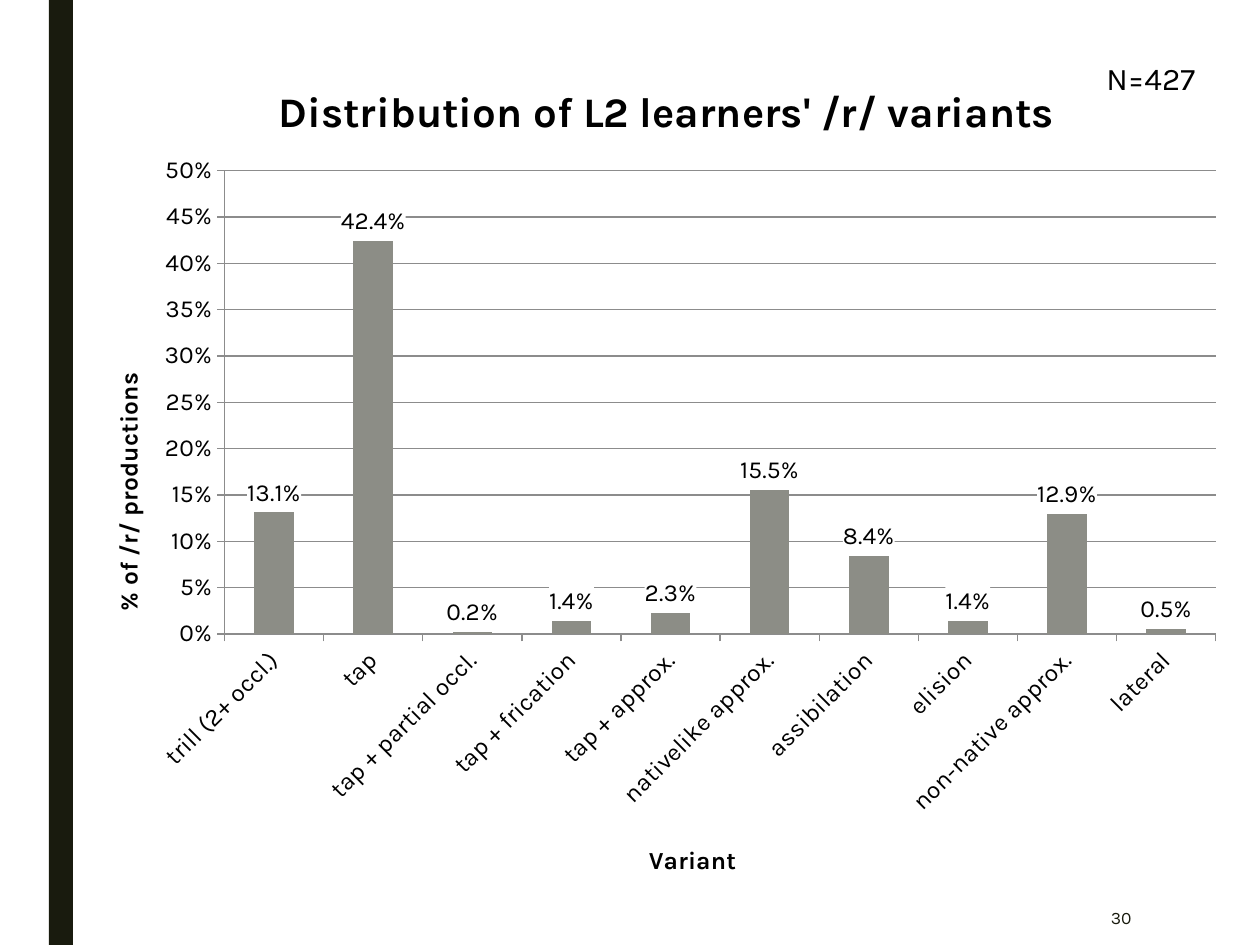
"""Build a slide with a column chart of L2 learners' /r/ variants."""
import pptx
import pptx.chart.data
import pptx.dml.color
import pptx.enum.chart
import pptx.enum.shapes
import pptx.enum.text
import pptx.oxml
import pptx.oxml.ns
import pptx.util

HUES = {"dark": "191B0E", "bar": "8C8D86", "line": "8C8C8C", "text": "000000", "back": "FFFFFF"}
HUES = {name: pptx.dml.color.RGBColor.from_string(code) for name, code in HUES.items()}
FACE = "Karla"
SHARES = {
    "trill (2+ occl.)": 0.131,
    "tap": 0.424,
    "tap + partial occl.": 0.002,
    "tap + frication": 0.014,
    "tap + approx.": 0.023,
    "nativelike approx.": 0.155,
    "assibilation": 0.084,
    "elision": 0.014,
    "non-native approx.": 0.129,
    "lateral": 0.005,
}


def style(font, size, hue="text", bold=False):
    font.name, font.size, font.bold = FACE, pptx.util.Pt(size), bold
    font.color.rgb = HUES[hue]


def place(part, index, **spots):
    for old in part.findall(pptx.oxml.ns.qn("c:layout")):
        part.remove(old)
    inner = '<c:layoutTarget val="inner"/>' if "w" in spots else ""
    modes = "".join(f'<c:{key}Mode val="edge"/>' for key in "xy")
    sizes = "".join(f'<c:{key} val="{val}"/>' for key, val in spots.items())
    part.insert(index, pptx.oxml.parse_xml(
        f'<c:layout {pptx.oxml.ns.nsdecls("c")}><c:manualLayout>'
        f"{inner}{modes}{sizes}</c:manualLayout></c:layout>"))


px = 914400 / 126
deck = pptx.Presentation()
deck.slide_width, deck.slide_height = int(1260 * px), int(945 * px)
slide = deck.slides.add_slide(deck.slide_layouts[6])

bar = slide.shapes.add_shape(
    pptx.enum.shapes.MSO_SHAPE.RECTANGLE, *[int(n * px) for n in (49, 0, 24, 945)])
bar.shadow.inherit = False
bar.fill.solid()
bar.fill.fore_color.rgb = HUES["dark"]
bar.line.fill.background()

data = pptx.chart.data.CategoryChartData(number_format="0.0%")
data.categories = list(SHARES)
data.add_series("Series 1", list(SHARES.values()))
chart = slide.shapes.add_chart(
    pptx.enum.chart.XL_CHART_TYPE.COLUMN_CLUSTERED,
    *[int(n * px) for n in (73, 42, 1166, 858)], data).chart
chart.has_legend = False
style(chart.font, 10)

plot = chart.plots[0]
plot.gap_width = 150
plot.vary_by_categories = False
series = plot.series[0]
series.format.fill.solid()
series.format.fill.fore_color.rgb = HUES["bar"]

labels = series.data_labels
labels.show_value = True
labels.number_format, labels.number_format_is_linked = "0.0%", False
labels.position = pptx.enum.chart.XL_LABEL_POSITION.OUTSIDE_END
style(labels.font, 14)
labels.font._element.getparent().getparent().getparent().addprevious(pptx.oxml.parse_xml(
    f'<c:spPr {pptx.oxml.ns.nsdecls("c", "a")}><a:solidFill>'
    f'<a:srgbClr val="{HUES["back"]}"/></a:solidFill></c:spPr>'))

cats, vals = chart.category_axis, chart.value_axis
vals.minimum_scale, vals.maximum_scale, vals.major_unit = 0, 0.5, 0.05
vals.has_major_gridlines = True
vals.major_gridlines.format.line.color.rgb = HUES["line"]
for axis, code in ((cats, "General"), (vals, "0%")):
    axis.major_tick_mark = pptx.enum.chart.XL_TICK_MARK.OUTSIDE
    axis.format.line.color.rgb = HUES["line"]
    axis.tick_labels.number_format = code
    axis.tick_labels.number_format_is_linked = False
    style(axis.tick_labels.font, 14)
turn = cats._element.find(pptx.oxml.ns.qn("c:txPr")).find(pptx.oxml.ns.qn("a:bodyPr"))
turn.set("rot", "-2700000")

for owner, text, size, angle, left, top in (
    (chart, "Distribution of L2 learners' /r/ variants", 24, 0, 0.17, 0.04),
    (cats, "Variant", 14, 0, 0.49, 0.93),
    (vals, "% of /r/ productions", 14, -90, 0.03, 0.38),
):
    owner.has_title = True
    title = owner.chart_title if owner is chart else owner.axis_title
    frame = title.text_frame
    frame.text = text
    style(frame.paragraphs[0].font, size, bold=True)
    frame._txBody.find(pptx.oxml.ns.qn("a:bodyPr")).set("rot", str(angle * 60000))
    place(title._element, 1, x=left, y=top)
place(chart._chartSpace.chart.plotArea, 0, x=0.13, y=0.15, w=0.85, h=0.54)

for text, size, hue, align, anchor, spot in (
    ("30", 10, "dark", "RIGHT", "MIDDLE", (979, 890, 165, 55)),
    ("N=427", 18, "text", "LEFT", "TOP", (1094, 53, 146, 50)),
):
    frame = slide.shapes.add_textbox(*[int(n * px) for n in spot]).text_frame
    frame.word_wrap = True
    frame.vertical_anchor = pptx.enum.text.MSO_ANCHOR[anchor]
    para = frame.paragraphs[0]
    para.text = text
    para.alignment = pptx.enum.text.PP_ALIGN[align]
    style(para.font, size, hue)

deck.save("out.pptx")
